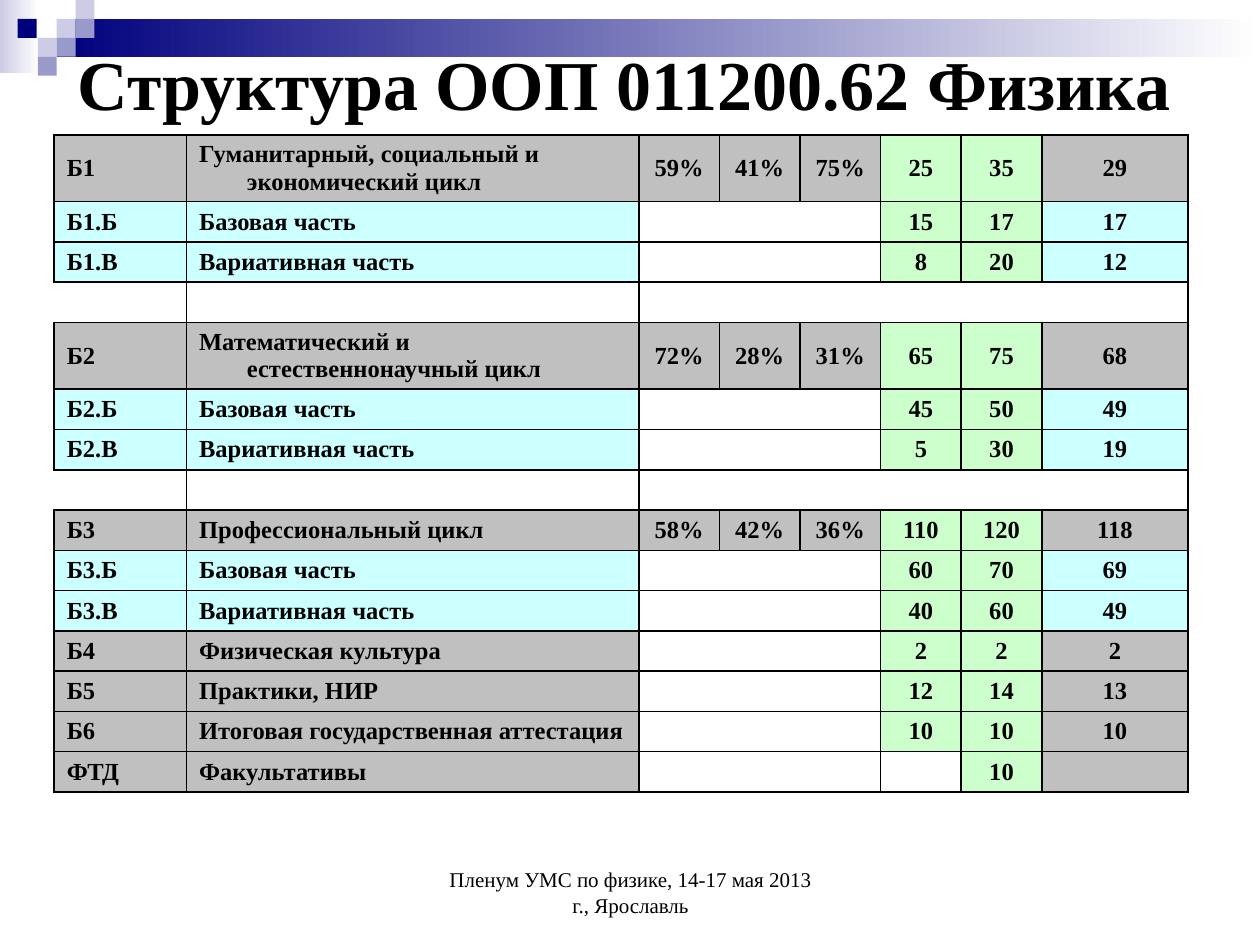
from lxml import etree
from pptx import Presentation
from pptx.dml.color import RGBColor
from pptx.enum.shapes import MSO_SHAPE
from pptx.enum.text import MSO_ANCHOR, PP_ALIGN
from pptx.oxml.ns import qn
from pptx.util import Inches, Pt

RECTANGLE = MSO_SHAPE.RECTANGLE
LEFT, CENTER = PP_ALIGN.LEFT, PP_ALIGN.CENTER
MIDDLE, BOTTOM = MSO_ANCHOR.MIDDLE, MSO_ANCHOR.BOTTOM

FONT = "Times New Roman"
BLACK, WHITE, GRAY = "000000", "FFFFFF", "C0C0C0"
CYAN, GREEN = "CCFFFF", "CCFFCC"
NAVY, LAVENDER, VIOLET = "00007D", "CCCCE6", "9999CC"

TITLE = "Структура ООП 011200.62 Физика"
FOOTER = "Пленум УМС по физике, 14-17 мая 2013 г., Ярославль"

# left, top, width, height, start colour
GRADIENT_BARS = [(0, 0, 0.31, 0.58, LAVENDER), (0.45, 0.15, 9.55, 0.3, NAVY)]
SQUARE = 0.15
SQUARES = [
    (0.45, 0.15, LAVENDER), (0.6, 0, LAVENDER), (0.6, 0.15, VIOLET),
    (0.3, 0.3, LAVENDER), (0.14, 0.15, NAVY), (0.45, 0.3, VIOLET),
    (0.3, 0.45, VIOLET),
]

NO_SHARES = ("", "", "")
SPACER = ("",) * 8
ROWS = [
    ("Б1", "Гуманитарный, социальный и экономический цикл",
     "59%", "41%", "75%", "25", "35", "29"),
    ("Б1.Б", "Базовая часть", *NO_SHARES, "15", "17", "17"),
    ("Б1.В", "Вариативная часть", *NO_SHARES, "8", "20", "12"),
    SPACER,
    ("Б2", "Математический и естественнонаучный цикл",
     "72%", "28%", "31%", "65", "75", "68"),
    ("Б2.Б", "Базовая часть", *NO_SHARES, "45", "50", "49"),
    ("Б2.В", "Вариативная часть", *NO_SHARES, "5", "30", "19"),
    SPACER,
    ("Б3", "Профессиональный цикл", "58%", "42%", "36%", "110", "120", "118"),
    ("Б3.Б", "Базовая часть", *NO_SHARES, "60", "70", "69"),
    ("Б3.В", "Вариативная часть", *NO_SHARES, "40", "60", "49"),
    ("Б4", "Физическая культура", *NO_SHARES, "2", "2", "2"),
    ("Б5", "Практики, НИР", *NO_SHARES, "12", "14", "13"),
    ("Б6", "Итоговая государственная аттестация", *NO_SHARES, "10", "10", "10"),
    ("ФТД", "Факультативы", *NO_SHARES, "", "10", ""),
]
COLUMN_WIDTHS = [1.05, 3.59] + [0.64] * 5 + [1.16]
ROW_HEIGHT, TALL_ROW_HEIGHT = 0.32, 0.53
CELL_MARGIN = 0.02
TALL_ROWS = (0, 4)
SHARES = range(2, 5)
LIMITS = (5, 6)
HANGING = 0.38


def color(value):
    return RGBColor.from_string(value)


def paint(fill, value):
    fill.solid()
    fill.fore_color.rgb = color(value)


def write(frame, text, size, bold=False, align=LEFT, hanging=0):
    frame.word_wrap = True
    para = frame.paragraphs[0]
    para.alignment = align
    if hanging:
        properties = para._p.get_or_add_pPr()
        properties.set("marL", str(Inches(hanging)))
        properties.set("indent", str(-Inches(hanging)))
    if not text:
        # Keeps an empty line as low as a written one.
        ending = etree.SubElement(
            para._p, qn("a:endParaRPr"), sz=str(size * 100))
        etree.SubElement(ending, qn("a:latin"), typeface=FONT)
        return
    span = para.add_run()
    span.text = text
    span.font.name = FONT
    span.font.size = Pt(size)
    span.font.bold = bold
    span.font.color.rgb = color(BLACK)


def add_text(page, place, text, anchor, **style):
    box = page.shapes.add_textbox(*map(Inches, place))
    box.text_frame.vertical_anchor = anchor
    write(box.text_frame, text, **style)


def add_block(page, left, top, width, height, start, end=None):
    block = page.shapes.add_shape(
        RECTANGLE, *map(Inches, (left, top, width, height)))
    block.shadow.inherit = False
    block.line.fill.background()
    if end is None:
        paint(block.fill, start)
        return
    block.fill.gradient()
    block.fill.gradient_angle = 0
    for stop, value in zip(block.fill.gradient_stops, (start, end)):
        stop.color.rgb = color(value)


def set_borders(cell, sides):
    properties = cell._tc.get_or_add_tcPr()
    for side in "LRTB":
        line = etree.SubElement(
            properties, qn(f"a:ln{side}"), w=str(Pt(1)))
        if side in sides:
            solid = etree.SubElement(line, qn("a:solidFill"))
            etree.SubElement(solid, qn("a:srgbClr"), val=BLACK)
        else:
            etree.SubElement(line, qn("a:noFill"))


def cell_sides(row, column):
    if row is SPACER and column == 0:
        return "RTB"
    if row is not SPACER and column in SHARES and not row[column]:
        return {SHARES[0]: "LTB", SHARES[-1]: "RTB"}.get(column, "TB")
    return "LRTB"


def cell_color(row, column):
    if row is SPACER or (column in (*SHARES, *LIMITS) and not row[column]):
        return WHITE
    if column in LIMITS:
        return GREEN
    return CYAN if "." in row[0] else GRAY


def add_structure_table(page):
    heights = [TALL_ROW_HEIGHT if index in TALL_ROWS else ROW_HEIGHT
               for index in range(len(ROWS))]
    place = (0.43, 1.07, sum(COLUMN_WIDTHS), sum(heights))
    table = page.shapes.add_table(
        len(ROWS), len(COLUMN_WIDTHS), *map(Inches, place)).table
    table.first_row = table.horz_banding = False
    for column, width in zip(table.columns, COLUMN_WIDTHS):
        column.width = Inches(width)
    for row_index, row in enumerate(ROWS):
        table.rows[row_index].height = Inches(heights[row_index])
        for column, text in enumerate(row):
            cell = table.cell(row_index, column)
            cell.vertical_anchor = MIDDLE
            cell.margin_top = cell.margin_bottom = Inches(CELL_MARGIN)
            set_borders(cell, cell_sides(row, column))
            paint(cell.fill, cell_color(row, column))
            write(cell.text_frame, text, size=14, bold=True,
                  align=LEFT if column < 2 else CENTER, hanging=HANGING)
        if row is SPACER:
            table.cell(row_index, SHARES[0]).merge(
                table.cell(row_index, len(row) - 1))


def main():
    deck = Presentation()
    deck.slide_width, deck.slide_height = Inches(10), Inches(7.5)
    page = deck.slides.add_slide(deck.slide_layouts[6])
    paint(page.background.fill, WHITE)
    for *place, start in GRADIENT_BARS:
        add_block(page, *place, start, WHITE)
    for left, top, value in SQUARES:
        add_block(page, left, top, SQUARE, SQUARE, value)
    add_text(page, (3.42, 6.83, 3.17, 0.5), FOOTER, BOTTOM,
             size=12, align=CENTER)
    add_text(page, (0.52, 0.37, 9, 0.57), TITLE, MIDDLE, size=40, bold=True)
    add_structure_table(page)
    deck.save("out.pptx")


if __name__ == "__main__":
    main()
